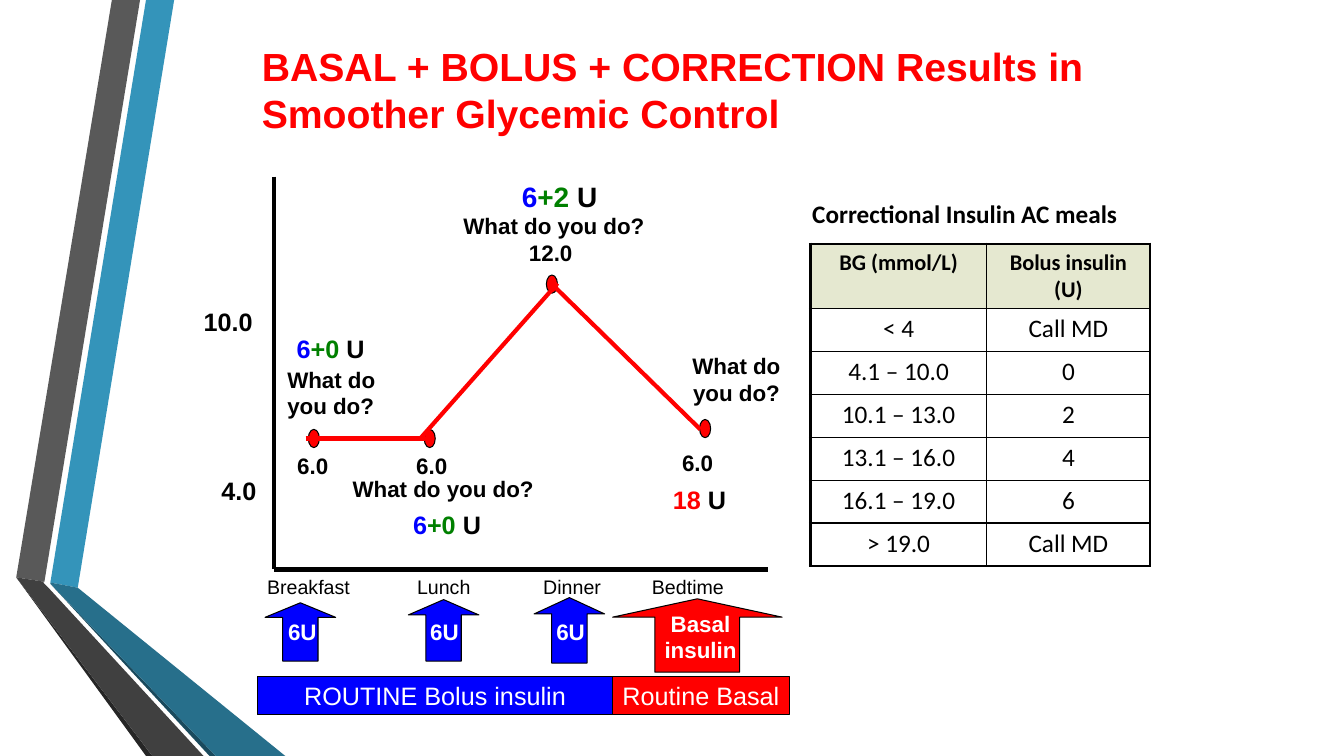
from lxml import etree
from pptx import Presentation
from pptx.dml.color import RGBColor
from pptx.enum.shapes import MSO_CONNECTOR, MSO_SHAPE
from pptx.enum.text import MSO_ANCHOR, MSO_AUTO_SIZE, PP_ALIGN
from pptx.oxml.ns import qn
from pptx.util import Cm, Pt

STRAIGHT = MSO_CONNECTOR.STRAIGHT
OVAL, RECTANGLE, UP_ARROW = MSO_SHAPE.OVAL, MSO_SHAPE.RECTANGLE, MSO_SHAPE.UP_ARROW
LEFT, CENTER = PP_ALIGN.LEFT, PP_ALIGN.CENTER
TOP, MIDDLE = MSO_ANCHOR.TOP, MSO_ANCHOR.MIDDLE
GROW, FIXED = MSO_AUTO_SIZE.SHAPE_TO_FIT_TEXT, MSO_AUTO_SIZE.NONE

BLACK, WHITE, RED, BLUE, GREEN = "000000", "FFFFFF", "FF0000", "0000FF", "008000"
HEADER_FILL = "E5E8D0"
QUESTION = "What do you do?"

RIBBONS = [
    ("3494BA", [(1.27, 14.68), (1.96, 14.81), (4.39, 0), (3.68, 0)]),
    ("595959", [(3.53, 0), (2.82, 0), (0.41, 14.55), (1.12, 14.66)]),
    ("262626", [(0.41, 14.55), (3.68, 19.05), (3.84, 19.05)]),
    ("1A4A5D", [(1.27, 14.71), (5.28, 19.05), (5.44, 19.05)]),
    ("276F8B", [(1.27, 14.71), (5.44, 19.05), (7.19, 19.05), (1.96, 14.81), (1.27, 14.68)]),
    ("404040", [(5.13, 19.05), (1.22, 14.81), (1.09, 14.68), (1.12, 14.66),
                (0.41, 14.55), (3.84, 19.05)]),
]
AXIS_LABELS = [("4.0", 5.33, 11.86, 1.57), ("10.0", 4.88, 7.59, 2.03)]
MEALS = [("Breakfast", 6.48), ("Lunch", 10.26), ("Dinner", 13.44), ("Bedtime", 16.18)]
# reading, dot left and top, label left and top
READINGS = [
    ("6.0", 7.77, 10.82, 7.24, 11.28),
    ("6.0", 10.69, 10.82, 10.24, 11.28),
    ("12.0", 13.77, 6.93, 13.08, 5.89),
    ("6.0", 17.63, 10.57, 16.94, 11.2),
]
SEGMENTS = [
    (7.7, 11.05, 10.72, 11.05),
    (10.59, 11.05, 14.05, 7.14),
    (13.89, 7.14, 17.65, 10.82),
]
QUESTIONS = [
    (6.99, 9.09, 2.97, 1.63, LEFT),
    (11.43, 5.21, 5.51, 0.94, LEFT),
    (17.15, 8.74, 2.82, 1.63, CENTER),
    (8.59, 11.86, 5.16, 0.94, CENTER),
]
# correction, left, top, width, size, alignment
DOSES = [
    ("+2 ", 12.9, 4.39, 2.97, 20, LEFT),
    ("+0 ", 7.14, 8.28, 2.39, 18, CENTER),
    ("+0 ", 10.16, 12.7, 2.34, 18, LEFT),
]
# left, top, height, label left
BOLUS_ARROWS = [
    (6.68, 15.19, 1.47, 7.01),
    (10.29, 15.11, 1.55, 10.59),
    (13.46, 15.06, 1.65, 13.77),
]
SCALE = [
    ("BG (mmol/L)", "Bolus insulin (U)"),
    ("< 4", "Call MD"),
    ("4.1 – 10.0", "0"),
    ("10.1 – 13.0", "2"),
    ("13.1 – 16.0", "4"),
    ("16.1 – 19.0", "6"),
    ("> 19.0", "Call MD"),
]


def color(value):
    return RGBColor.from_string(value)


class SlidePainter:
    def __init__(self, slide, font="Arial"):
        self.shapes = slide.shapes
        self.font = font

    def add_runs(self, frame, runs, size, bold=True, align=LEFT, font=None):
        """Fill the first paragraph with (text, colour) runs."""
        paragraph = frame.paragraphs[0]
        paragraph.alignment = align
        for text, text_color in runs:
            run = paragraph.add_run()
            run.text = text
            run.font.name = font or self.font
            run.font.size = Pt(size)
            run.font.bold = bold
            run.font.color.rgb = color(text_color)

    def text(self, runs, left, top, width, height, size, bold=True, align=LEFT,
             font=None, anchor=TOP, auto_size=GROW):
        box = self.shapes.add_textbox(Cm(left), Cm(top), Cm(width), Cm(height))
        frame = box.text_frame
        frame.word_wrap = True
        frame.auto_size = auto_size
        frame.vertical_anchor = anchor
        self.add_runs(frame, runs, size, bold, align, font)

    def shape(self, kind, left, top, width, height, fill):
        shape = self.shapes.add_shape(kind, Cm(left), Cm(top), Cm(width), Cm(height))
        shape.shadow.inherit = False
        shape.fill.solid()
        shape.fill.fore_color.rgb = color(fill)
        shape.line.color.rgb = color(BLACK)
        shape.line.width = Pt(0.75)
        return shape

    def arrow(self, left, top, width, height, fill):
        self.shape(UP_ARROW, left, top, width, height, fill).adjustments[1] = 0.25

    def bar(self, text, left, width, fill):
        frame = self.shape(RECTANGLE, left, 17.04, width, 0.97, fill).text_frame
        frame.word_wrap = False
        frame.vertical_anchor = MIDDLE
        self.add_runs(frame, [(text, WHITE)], 18, False, CENTER)

    def line(self, start_x, start_y, end_x, end_y, line_color):
        connector = self.shapes.add_connector(
            STRAIGHT, Cm(start_x), Cm(start_y), Cm(end_x), Cm(end_y))
        connector.line.color.rgb = color(line_color)
        connector.line.width = Pt(3)
        etree.SubElement(connector._element.spPr, qn("a:effectLst"))

    def ribbon(self, fill, points):
        corners = [(Cm(x), Cm(y)) for x, y in points]
        builder = self.shapes.build_freeform(*corners[0])
        builder.add_line_segments(corners[1:], close=True)
        shape = builder.convert_to_shape()
        shape.shadow.inherit = False
        shape.fill.solid()
        shape.fill.fore_color.rgb = color(fill)
        shape.line.fill.background()

    def border(self, cell, widths):
        """Draw the left, right, top and bottom edges with widths in points."""
        properties = cell._tc.get_or_add_tcPr()
        for index, (side, width) in enumerate(zip("LRTB", widths)):
            edge = etree.Element(qn(f"a:ln{side}"), w=str(Pt(width)))
            fill = etree.SubElement(edge, qn("a:solidFill"))
            etree.SubElement(fill, qn("a:srgbClr"), val=BLACK)
            properties.insert(index, edge)

    def table(self, rows, left, top, column_widths, header_height, row_height):
        total_height = header_height + row_height * (len(rows) - 1)
        table = self.shapes.add_table(
            len(rows), len(column_widths), Cm(left), Cm(top),
            Cm(sum(column_widths)), Cm(total_height)).table
        table.first_row = table.horz_banding = False
        for column, width in zip(table.columns, column_widths):
            column.width = Cm(width)
        last_row, last_column = len(rows) - 1, len(column_widths) - 1
        for i, values in enumerate(rows):
            header = i == 0
            table.rows[i].height = Cm(header_height if header else row_height)
            for j, value in enumerate(values):
                cell = table.cell(i, j)
                if header:
                    cell.fill.solid()
                    cell.fill.fore_color.rgb = color(HEADER_FILL)
                else:
                    cell.fill.background()
                outer = (j == 0, j == last_column, header, i == last_row)
                self.border(cell, [2.25 if edge else 1 for edge in outer])
                self.add_runs(cell.text_frame, [(value, BLACK)], 16 if header else 18,
                              header, CENTER, "Calibri")


def main():
    presentation = Presentation()
    presentation.slide_width, presentation.slide_height = Cm(33.87), Cm(19.05)
    painter = SlidePainter(presentation.slides.add_slide(presentation.slide_layouts[6]))

    for fill, points in RIBBONS:
        painter.ribbon(fill, points)
    painter.text([("BASAL + BOLUS + CORRECTION Results in Smoother Glycemic Control", RED)],
                 6.35, 1.04, 22.86, 2.41, 28, anchor=MIDDLE, auto_size=FIXED)

    painter.line(6.91, 4.45, 6.91, 14.35, BLACK)
    painter.line(6.91, 14.35, 19.35, 14.35, BLACK)
    for label, left, top, width in AXIS_LABELS:
        painter.text([(label, BLACK)], left, top, width, 1.02, 18)
    for meal, left in MEALS:
        painter.text([(meal, BLACK)], left, 14.35, 3.18, 0.84, 14, bold=False)

    painter.text([("Correctional Insulin AC meals", BLACK)],
                 20.22, 4.88, 9.37, 1.02, 18, font="Calibri")
    painter.table(SCALE, 20.42, 6.15, (4.45, 4.11), 1.63, 1.08)

    for reading, dot_left, dot_top, left, top in READINGS:
        painter.shape(OVAL, dot_left, dot_top, 0.28, 0.46, RED)
        painter.text([(reading, BLACK)], left, top, 1.75, 0.94, 16)
    for segment in SEGMENTS:
        painter.line(*segment, RED)

    for left, top, width, height, align in QUESTIONS:
        painter.text([(QUESTION, BLACK)], left, top, width, height, 16, align=align)
    for correction, left, top, width, size, align in DOSES:
        painter.text([("6", BLUE), (correction, GREEN), ("U", BLACK)],
                     left, top, width, 1.02, size, align=align)
    painter.text([("18 ", RED), ("U", BLACK)], 16.71, 12.07, 2.34, 1.02, 18)

    for left, top, height, label_left in BOLUS_ARROWS:
        painter.arrow(left, top, 1.78, height, BLUE)
        painter.text([("6U", WHITE)], label_left, 15.44, 1.7, 0.94, 16)
    painter.arrow(15.44, 15.09, 4.27, 1.85, RED)
    painter.text([("Basal insulin", WHITE)], 16.36, 15.24, 2.59, 1.63, 16, align=CENTER)
    painter.bar("ROUTINE Bolus insulin", 6.48, 8.97, BLUE)
    painter.bar("Routine Basal", 15.44, 4.45, RED)

    presentation.save("out.pptx")


if __name__ == "__main__":
    main()
